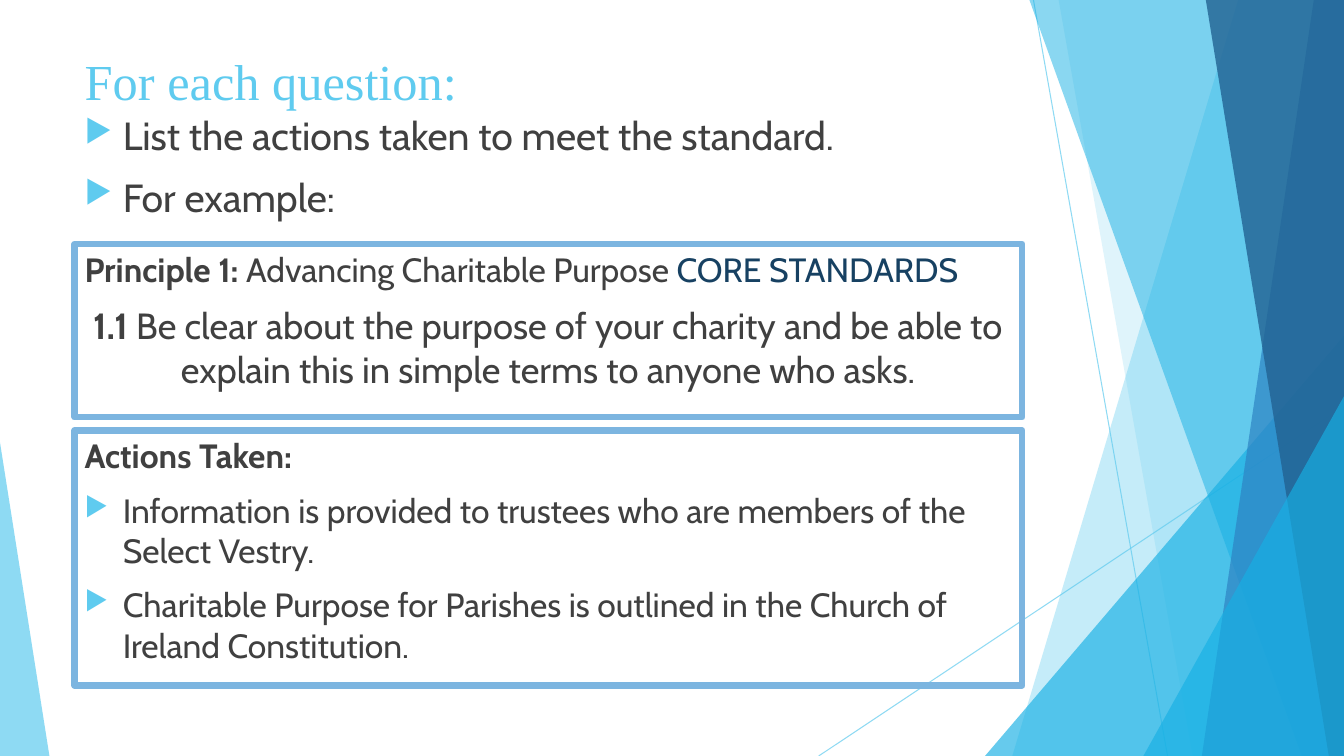
import dataclasses
import typing

import lxml.etree
import pptx
import pptx.dml.color
import pptx.enum.shapes
import pptx.enum.text
import pptx.oxml.ns
import pptx.util

Inches = pptx.util.Inches
Pt = pptx.util.Pt
RGBColor = pptx.dml.color.RGBColor
Kind = pptx.enum.shapes.MSO_SHAPE
Align = pptx.enum.text.PP_ALIGN
Anchor = pptx.enum.text.MSO_ANCHOR
qn = pptx.oxml.ns.qn

SKY = RGBColor(0x5F, 0xCB, 0xEF)
CYAN = RGBColor(0x17, 0xB0, 0xE4)
BLUE = RGBColor(0x2E, 0x83, 0xC3)
NAVY = RGBColor(0x22, 0x62, 0x92)
FRAME = RGBColor(0x7C, 0xB5, 0xE0)
INK = RGBColor(0x40, 0x40, 0x40)
DEEP = RGBColor(0x17, 0x41, 0x62)

WIDE, HIGH = 13.33, 7.5
LEFT, SPAN = 0.74, 9.4


@dataclasses.dataclass
class Ray:
    start: tuple[float, float]
    end: tuple[float, float]


@dataclasses.dataclass
class Band:
    """Area from a slanted left edge to the right side of the slide."""
    head: float
    foot: float
    color: RGBColor
    alpha: int


@dataclasses.dataclass
class Peak:
    """Right triangle standing on the bottom of the slide."""
    left: float
    top: float
    width: float
    apex: float
    color: RGBColor
    alpha: int


@dataclasses.dataclass
class Span:
    text: str
    bold: bool = False
    color: RGBColor = INK


@dataclasses.dataclass
class Line:
    spans: list[Span]
    size: int = 24
    bullet: bool = False
    align: typing.Any = Align.LEFT


@dataclasses.dataclass
class Box:
    top: float
    height: float
    lines: list[Line]
    framed: bool = True


RAYS = [Ray((10.25, 0), (11.58, HIGH)), Ray((WIDE, 4.03), (8.12, HIGH))]

DECOR = [
    Band(12.28, 10.04, SKY, 36),
    Band(10.5, 11.83, SKY, 20),
    Peak(9.77, 3.33, 3.56, 1, CYAN, 66),
    Band(10.21, 12.91, CYAN, 50),
    Band(13.03, 11.92, BLUE, 70),
    Band(11.96, 13.18, NAVY, 80),
    Peak(11.34, 3.93, 1.99, 1, CYAN, 66),
    Peak(0, 4.39, 0.49, 0, SKY, 70),
]

BOXES = [
    Box(1.06, 1.3, [
        Line([Span("List the actions taken to meet the standard.")], 28, True),
        Line([Span("For example:")], 28, True),
    ], framed=False),
    Box(4.27, 2.53, [
        Line([Span("Actions Taken:", True)]),
        Line([Span("Information is provided to trustees who are members of "
                   "the Select Vestry.")], bullet=True),
        Line([Span("Charitable Purpose for Parishes is outlined in the "
                   "Church of Ireland Constitution.")], bullet=True),
    ]),
    Box(2.42, 1.72, [
        Line([Span("Principle 1: ", True), Span("Advancing Charitable Purpose "),
              Span("CORE STANDARDS", color=DEEP)]),
        Line([Span("1.1", True),
              Span(" Be clear about the purpose of your charity and be able to "
                   "explain this in simple terms to anyone who asks.")],
             26, align=Align.CENTER),
    ]),
]


def fade(fill: typing.Any, alpha: int) -> None:
    """Set the opacity, in percent, of the solid colour under an element."""
    color = next(fill.iter(qn("a:srgbClr")))
    lxml.etree.SubElement(color, qn("a:alpha"), val=str(alpha * 1000))


def draw_ray(slide: typing.Any, ray: Ray) -> None:
    ends = [Inches(n) for n in ray.start + ray.end]
    line = slide.shapes.add_connector(
        pptx.enum.shapes.MSO_CONNECTOR.STRAIGHT, *ends)
    line.line.color.rgb = SKY
    line.line.width = Pt(0.75)
    props = line.element.spPr
    fade(props, 70)
    lxml.etree.SubElement(props, qn("a:effectLst"))


def draw_decor(slide: typing.Any, item: Band | Peak) -> None:
    if isinstance(item, Band):
        dots = [(item.head, 0), (WIDE, 0), (WIDE, HIGH), (item.foot, HIGH)]
        dots = [(Inches(x), Inches(y)) for x, y in dots]
        pen = slide.shapes.build_freeform(*dots[0])
        pen.add_line_segments(dots[1:], close=True)
        shape = pen.convert_to_shape()
    else:
        shape = slide.shapes.add_shape(
            Kind.ISOSCELES_TRIANGLE, Inches(item.left), Inches(item.top),
            Inches(item.width), Inches(HIGH - item.top))
        shape.adjustments[0] = item.apex
    shape.shadow.inherit = False
    shape.fill.solid()
    shape.fill.fore_color.rgb = item.color
    shape.line.fill.background()
    fade(shape.element.spPr, item.alpha)


def add_bullet(para: typing.Any) -> None:
    props = para._p.get_or_add_pPr()
    props.set("marL", str(Inches(0.38)))
    props.set("indent", str(Inches(-0.38)))
    tint = lxml.etree.SubElement(props, qn("a:buClr"))
    lxml.etree.SubElement(tint, qn("a:srgbClr"), val=str(SKY))
    lxml.etree.SubElement(props, qn("a:buSzPct"), val="80000")
    lxml.etree.SubElement(props, qn("a:buChar"), char="▶")


def draw_box(slide: typing.Any, box: Box) -> None:
    place = [Inches(n) for n in (LEFT, box.top, SPAN, box.height)]
    if box.framed:
        shape = slide.shapes.add_shape(Kind.RECTANGLE, *place)
        shape.shadow.inherit = False
        shape.fill.background()
        shape.line.color.rgb = FRAME
        shape.line.width = Pt(4.5)
    else:
        shape = slide.shapes.add_textbox(*place)
    frame = shape.text_frame
    frame.word_wrap = True
    frame.vertical_anchor = Anchor.TOP
    for i, line in enumerate(box.lines):
        para = frame.add_paragraph() if i else frame.paragraphs[0]
        para.alignment = line.align
        para.space_before = Pt(10)
        if line.bullet:
            add_bullet(para)
        for span in line.spans:
            run = para.add_run()
            run.text = span.text
            run.font.name = "Cabin"
            run.font.size = Pt(line.size)
            run.font.bold = span.bold
            run.font.color.rgb = span.color


def set_title(slide: typing.Any, text: str) -> None:
    title = slide.shapes.title
    title.left, title.top = Inches(LEFT), Inches(0.37)
    title.width, title.height = Inches(SPAN), Inches(0.85)
    frame = title.text_frame
    frame.text = text
    frame.vertical_anchor = Anchor.MIDDLE
    para = frame.paragraphs[0]
    para.alignment = Align.LEFT
    font = para.runs[0].font
    font.name, font.size = "Times New Roman", Pt(36)
    font.color.rgb = SKY


def main() -> None:
    deck = pptx.Presentation()
    deck.slide_width, deck.slide_height = Inches(WIDE), Inches(HIGH)
    slide = deck.slides.add_slide(deck.slide_layouts[5])
    for ray in RAYS:
        draw_ray(slide, ray)
    for item in DECOR:
        draw_decor(slide, item)
    set_title(slide, "For each question:")
    for box in BOXES:
        draw_box(slide, box)
    deck.save("out.pptx")


if __name__ == "__main__":
    main()
